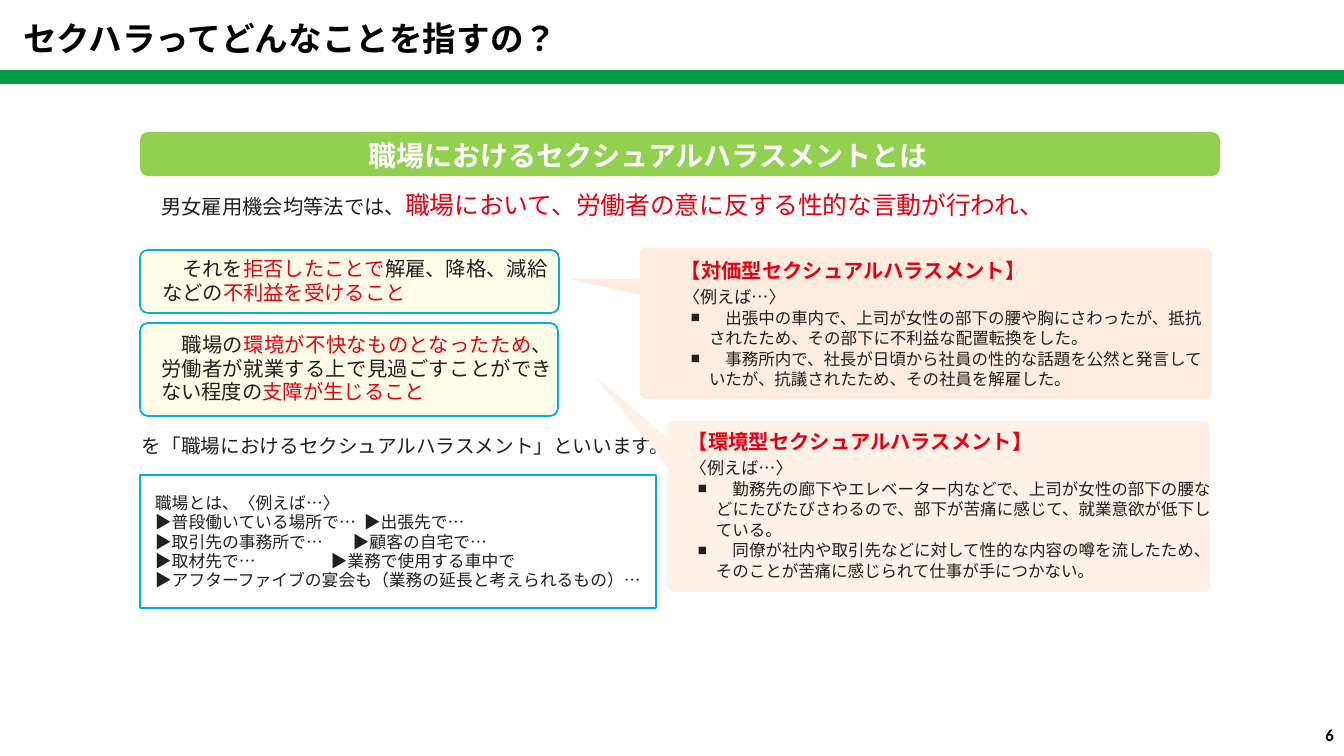
from lxml.etree import SubElement
from pptx import Presentation
from pptx.dml.color import RGBColor
from pptx.enum.lang import MSO_LANGUAGE_ID
from pptx.enum.shapes import MSO_SHAPE
from pptx.enum.text import MSO_ANCHOR, MSO_AUTO_SIZE, PP_ALIGN
from pptx.oxml.ns import qn
from pptx.util import Pt

PX = 914400 / 100.8
JAPANESE, LATIN = "Noto Sans CJK JP", "Calibri"
INK = RGBColor(0x23, 0x1F, 0x20)
RED = RGBColor(0xE6, 0x00, 0x12)
BLACK = RGBColor(0x00, 0x00, 0x00)
WHITE = RGBColor(0xFF, 0xFF, 0xFF)
GREEN = RGBColor(0x00, 0x99, 0x44)
LIME = RGBColor(0x92, 0xD0, 0x50)
CREAM = RGBColor(0xFF, 0xFD, 0xE8)
CYAN = RGBColor(0x00, 0xAE, 0xEF)
PEACH = RGBColor(0xFE, 0xE6, 0xD3)

TITLE = "セクハラってどんなことを指すの？"
BANNER = "職場におけるセクシュアルハラスメントとは"
INTRO = [("　男女雇用機会均等法では、", INK, 14.5),
         ("職場において、労働者の意に反する性的な言動が行われ、", RED, 17.7)]
CONCLUSION = "を「職場におけるセクシュアルハラスメント」といいます。"
PAGE = "6"
CONDITIONS = [
    dict(panel=(140, 250, 419, 63), area=(144, 254, 413, 51), indent=18, align=PP_ALIGN.LEFT,
         runs=[("　それを", INK), ("拒否したことで", RED),
               ("解雇、降格、減給などの", INK), ("不利益を受けること", RED)]),
    dict(panel=(140, 323, 418, 93), area=(144, 330, 408, 75), indent=17, align=PP_ALIGN.JUSTIFY,
         runs=[("　職場の", INK), ("環境が不快なものとなったため", RED),
               ("、労働者が就業する上で見過ごすことができない程度の", INK),
               ("支障が生じること", RED)]),
]
EXAMPLE = "〈例えば…〉"
WORKPLACES = [
    ("職場とは、" + EXAMPLE,),
    ("▶普段働いている場所で…", 4, "▶出張先で…"),
    ("▶取引先の事務所で…", 26, "▶顧客の自宅で…"),
    ("▶取材先で…", 71, "▶業務で使用する車中で"),
    ("▶アフターファイブの宴会も（業務の延長と考えられるもの）…",),
]
HARASSMENT_TYPES = [
    dict(panel=(640, 248, 572, 151), tail=[(640, 295), (569, 279), (640, 279)], opacity=71,
         area=(680, 252, 529, 141), align=PP_ALIGN.LEFT,
         heading="【対価型セクシュアルハラスメント】",
         cases=["　出張中の車内で、上司が女性の部下の腰や胸にさわったが、抵抗されたため、その部下に不利益な配置転換をした。",
                "　事務所内で、社長が日頃から社員の性的な話題を公然と発言していたが、抗議されたため、その社員を解雇した。"]),
    dict(panel=(668, 421, 542, 171), tail=[(668, 467), (593, 374), (668, 439)], opacity=52,
         area=(687, 423, 524, 162), align=PP_ALIGN.JUSTIFY,
         heading="【環境型セクシュアルハラスメント】",
         cases=["　勤務先の廊下やエレベーター内などで、上司が女性の部下の腰などにたびたびさわるので、部下が苦痛に感じて、就業意欲が低下している。",
                "　同僚が社内や取引先などに対して性的な内容の噂を流したため、そのことが苦痛に感じられて仕事が手につかない。"]),
]


def emu(*lengths):
    """Turn px lengths into EMU."""
    return [round(length * PX) for length in lengths]


def place(holder, area, insets=(0, 3, 0, 0), anchor=MSO_ANCHOR.TOP):
    """Position a text holder and return its prepared frame."""
    holder.left, holder.top, holder.width, holder.height = emu(*area)
    frame = holder.text_frame
    frame.word_wrap, frame.auto_size = True, MSO_AUTO_SIZE.NONE
    frame.vertical_anchor = anchor
    (frame.margin_left, frame.margin_top,
     frame.margin_right, frame.margin_bottom) = emu(*insets)
    return frame


def write(frame, text, size=14.5, color=INK, bold=False, font=JAPANESE, align=PP_ALIGN.LEFT,
          indent=0, hanging=0, spacing=None, before=0, bullet=None, kerning=True):
    """Write one paragraph from a string or from (text, color, size, tracking) runs."""
    paragraph = frame.paragraphs[0]
    if paragraph.runs:
        paragraph = frame.add_paragraph()
    paragraph.alignment, paragraph.space_before = align, Pt(before)
    if spacing:
        paragraph.line_spacing = Pt(spacing)
    properties = paragraph._p.get_or_add_pPr()
    margin, first_line = emu(indent, -hanging)
    properties.set("marL", str(margin))
    properties.set("indent", str(first_line))
    if bullet:
        SubElement(properties, qn("a:buSzPct"), val="92000")
        SubElement(properties, qn("a:buChar"), char=bullet)
    else:
        SubElement(properties, qn("a:buNone"))
    for words, tint, *extras in [(text, color)] if isinstance(text, str) else text:
        run = paragraph.add_run()
        run.text = words
        run.font.name, run.font.bold = font, bold
        run.font.language_id = MSO_LANGUAGE_ID.JAPANESE
        run.font.size = Pt(extras[0] if extras else size)
        run.font.color.rgb = tint
        character = run._r.get_or_add_rPr()
        if extras[1:]:
            character.set("spc", str(round(extras[1] * PX / 127)))
        if not kerning:
            character.set("kern", "0")
        SubElement(character, qn("a:ea"), typeface=font)


def paint(panel, fill=None, line=None):
    """Set the fill and outline of a shape without shadow."""
    panel.shadow.inherit = False
    if fill:
        panel.fill.solid()
        panel.fill.fore_color.rgb = fill
    else:
        panel.fill.background()
    if line:
        panel.line.color.rgb, panel.line.width = line, Pt(1.25)
    else:
        panel.line.fill.background()


def add_panel(shapes, area, fill=None, line=None, radius=0):
    """Add a square or rounded panel."""
    kind = MSO_SHAPE.ROUNDED_RECTANGLE if radius else MSO_SHAPE.RECTANGLE
    panel = shapes.add_shape(kind, *emu(*area))
    if radius:
        panel.adjustments[0] = radius / min(area[2:])
    paint(panel, fill, line)


def add_callout(shapes, area, tail, opacity):
    """Add a translucent rounded callout with a tail on its left."""
    left, top, width, height = area
    right, bottom = left + width, top + height
    curve = [(14, 0), (6, 0), (2, 1), (0, 5), (0, 12)]
    outline = [(left + x, top + y) for x, y in curve[::-1]]
    outline += [(right - x, top + y) for x, y in curve]
    outline += [(right - x, bottom - y) for x, y in curve[::-1]]
    outline += [(left + x, bottom - y) for x, y in curve] + tail
    builder = shapes.build_freeform(*outline[0], scale=PX)
    builder.add_line_segments(outline[1:])
    callout = builder.convert_to_shape()
    paint(callout, PEACH)
    tint = callout.element.spPr.find(qn("a:solidFill"))[0]
    SubElement(tint, qn("a:alpha"), val=str(opacity * 1000))


def main():
    """Build the slide on what counts as sexual harassment."""
    deck = Presentation()
    deck.slide_width, deck.slide_height = emu(1344, 756)
    slide = deck.slides.add_slide(deck.slide_layouts[3])
    shapes = slide.shapes
    title, *case_lists = slide.placeholders

    def add_text(area, **options):
        return place(shapes.add_textbox(0, 0, 0, 0), area, **options)

    add_panel(shapes, (140, 132, 1080, 44), LIME, radius=8)
    for condition in CONDITIONS:
        add_panel(shapes, condition["panel"], CREAM, CYAN, radius=8)
        write(add_text(condition["area"]), condition["runs"], indent=condition["indent"],
              align=condition["align"], spacing=16.9, before=2)

    add_panel(shapes, (140, 475, 516, 133), line=CYAN)
    workplaces = add_text((154, 492, 494, 101), insets=(0, 1, 0, 0))
    for number, (first, *rest) in enumerate(WORKPLACES):
        runs = [(first, INK)]
        if rest:
            gap, second = rest
            runs += [(" ", INK, 12, gap), (second, INK)]
        write(workplaces, runs, size=12, indent=1, before=1, spacing=12.7 if number else None)
    write(add_text((140, 436, 532, 23)), CONCLUSION, size=14, indent=2, spacing=13.5, before=2.5)

    for harassment, case_list in zip(HARASSMENT_TYPES, case_lists):
        add_callout(shapes, harassment["panel"], harassment["tail"], harassment["opacity"])
        case_list.element.getparent().append(case_list.element)
        frame = place(case_list, harassment["area"], insets=(0, 6, 0, 0))
        write(frame, harassment["heading"], color=RED, bold=True, indent=1, before=4.5)
        write(frame, EXAMPLE, size=12.2, indent=3, spacing=14.6, before=3.1)
        for case in harassment["cases"]:
            write(frame, case, size=11.8, align=harassment["align"], indent=29, hanging=18,
                  spacing=14.6, before=0.1, bullet="■")

    opening = add_text((140, 128, 1004, 93), insets=(0, 10, 0, 0))
    write(opening, BANNER, size=20, color=WHITE, bold=True, align=PP_ALIGN.CENTER,
          indent=12, before=14.8)
    write(opening, INTRO, indent=1, before=12.8)

    add_panel(shapes, (0, 70, 1344, 14), GREEN)
    write(place(title, (13, 13, 1190, 50), insets=(10, 5, 10, 5)), TITLE,
          size=24, color=BLACK, bold=True, kerning=False)
    page = add_text((1030, 715, 314, 40), insets=(10, 5, 10, 5), anchor=MSO_ANCHOR.MIDDLE)
    write(page, PAGE, size=12, color=BLACK, bold=True, font=LATIN, align=PP_ALIGN.RIGHT)
    deck.save("out.pptx")


if __name__ == "__main__":
    main()
